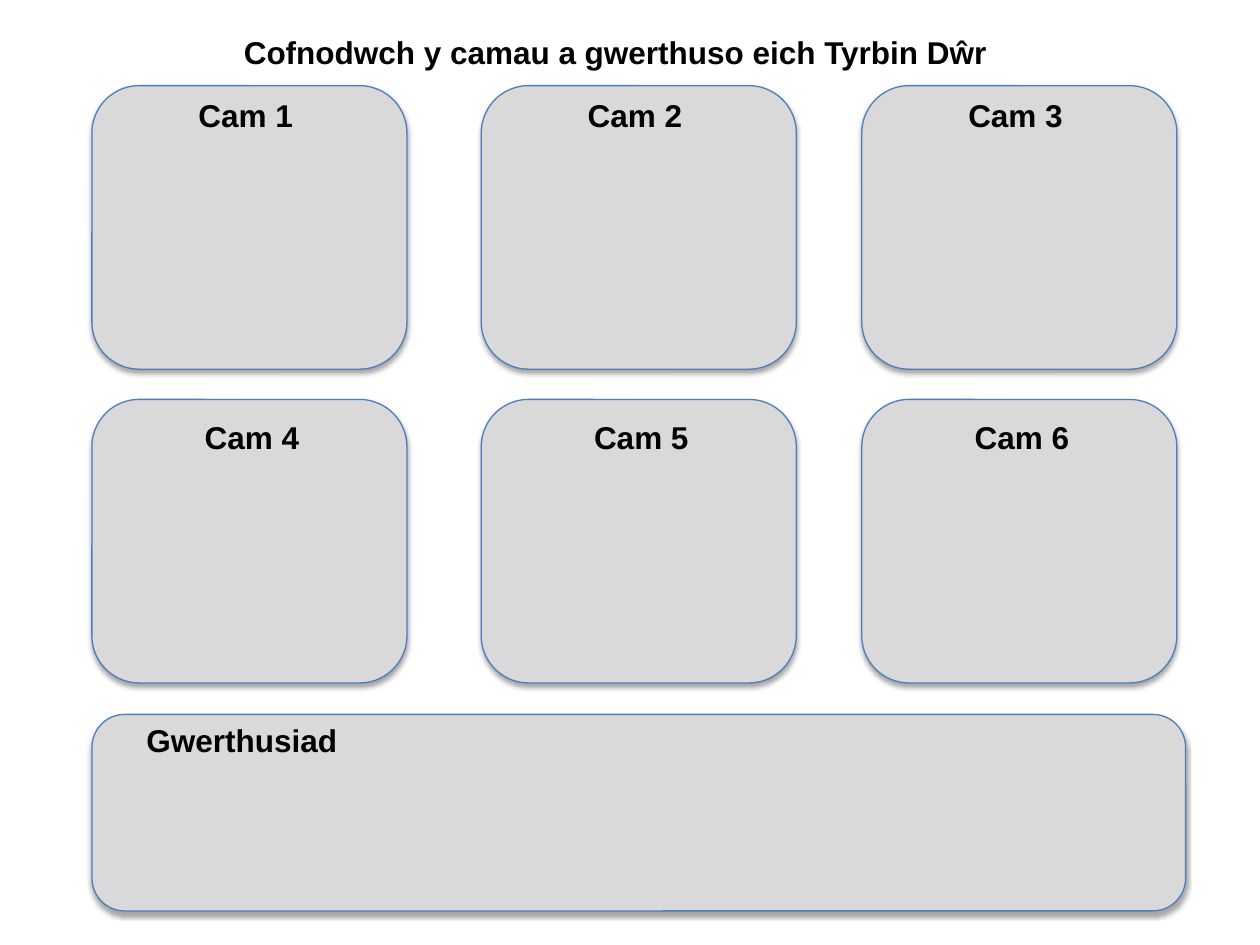
"""Build a worksheet slide with six step boxes and an evaluation box."""
from pptx import Presentation
from pptx.dml.color import RGBColor
from pptx.enum.shapes import MSO_SHAPE as Shape
from pptx.enum.text import MSO_ANCHOR as Anchor, MSO_AUTO_SIZE as Fit, PP_ALIGN as Align
from pptx.util import Inches, Pt

TITLE = "Cofnodwch y camau a gwerthuso eich Tyrbin Dŵr"
STEPS = [["Cam 1", "Cam 2", "Cam 3"], ["Cam 4", "Cam 5", "Cam 6"]]
REVIEW = "Gwerthusiad"

LEFTS = [0.73, 3.82, 6.84]
ROWS = [(0.68, 0.45, 0.03), (3.17, 0.5, 0.1)]
BOX_W, BOX_H = 2.5, 2.25
LABEL_W, LABEL_H = 1.54, 0.4

BLACK = RGBColor(0x00, 0x00, 0x00)
GREY = RGBColor(0xD9, 0xD9, 0xD9)
BLUE = RGBColor(0x4B, 0x7E, 0xBC)


def write(shape, text):
    frame = shape.text_frame
    frame.word_wrap = True
    frame.vertical_anchor = Anchor.TOP
    frame.auto_size = Fit.SHAPE_TO_FIT_TEXT
    para = frame.paragraphs[0]
    para.text = text
    para.alignment = Align.CENTER
    font = para.font
    font.name, font.size, font.bold = "Arial", Pt(18), True
    font.color.rgb = BLACK


def add_box(slide, x, y, w, h):
    box = slide.shapes.add_shape(Shape.ROUNDED_RECTANGLE, *map(Inches, (x, y, w, h)))
    box.fill.solid()
    box.fill.fore_color.rgb = GREY
    box.line.color.rgb = BLUE
    box.line.width = Pt(0.75)


def add_label(slide, text, x, y, w):
    write(slide.shapes.add_textbox(*map(Inches, (x, y, w, LABEL_H))), text)


def main():
    deck = Presentation()
    deck.slide_width, deck.slide_height = Inches(10), Inches(7.5)
    slide = deck.slides.add_slide(deck.slide_layouts[5])

    title = slide.shapes.title
    title.left, title.top = Inches(1.16), Inches(0.21)
    title.width, title.height = Inches(7.45), Inches(LABEL_H)
    write(title, TITLE)

    for names, (top, dx, dy) in zip(STEPS, ROWS):
        for name, left in zip(names, LEFTS):
            add_box(slide, left, top, BOX_W, BOX_H)
            add_label(slide, name, left + dx, top + dy, LABEL_W)

    add_box(slide, LEFTS[0], 5.67, 8.68, 1.56)
    add_label(slide, REVIEW, 0.77, 5.67, 2.3)
    deck.save("out.pptx")


if __name__ == "__main__":
    main()
